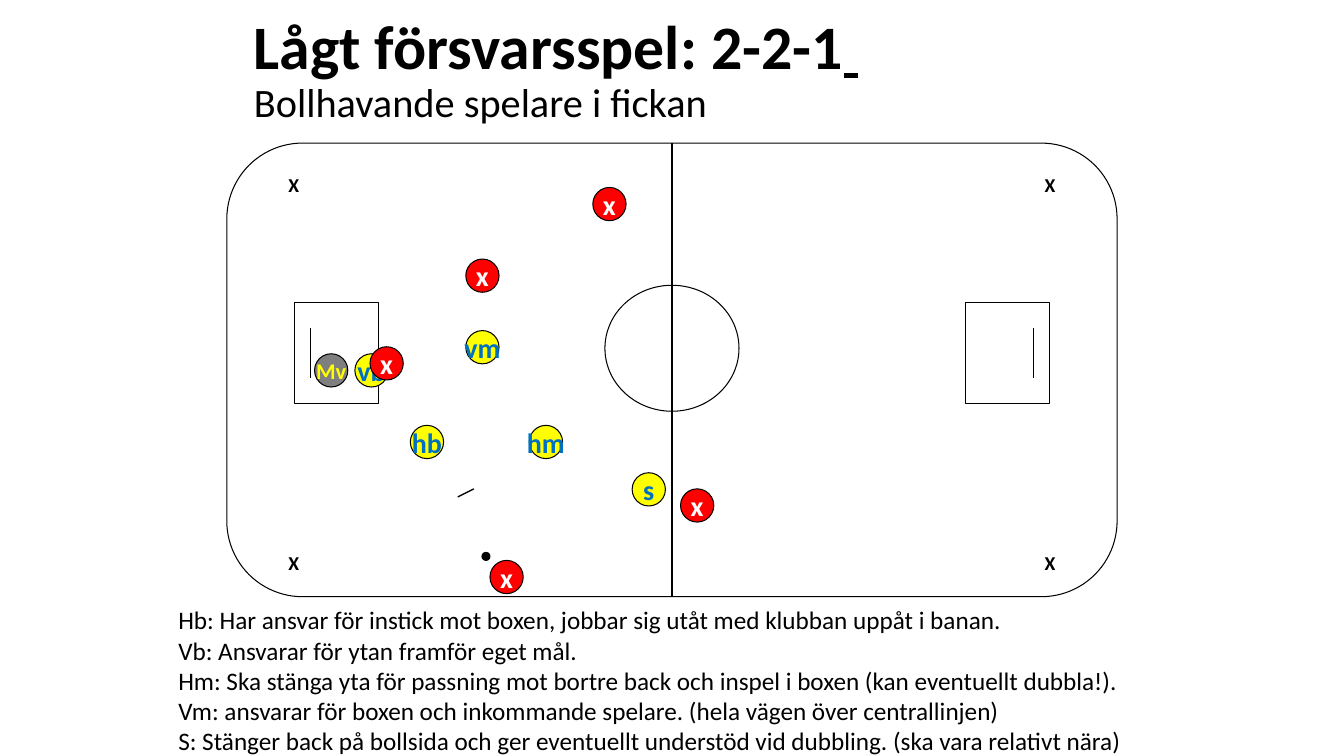
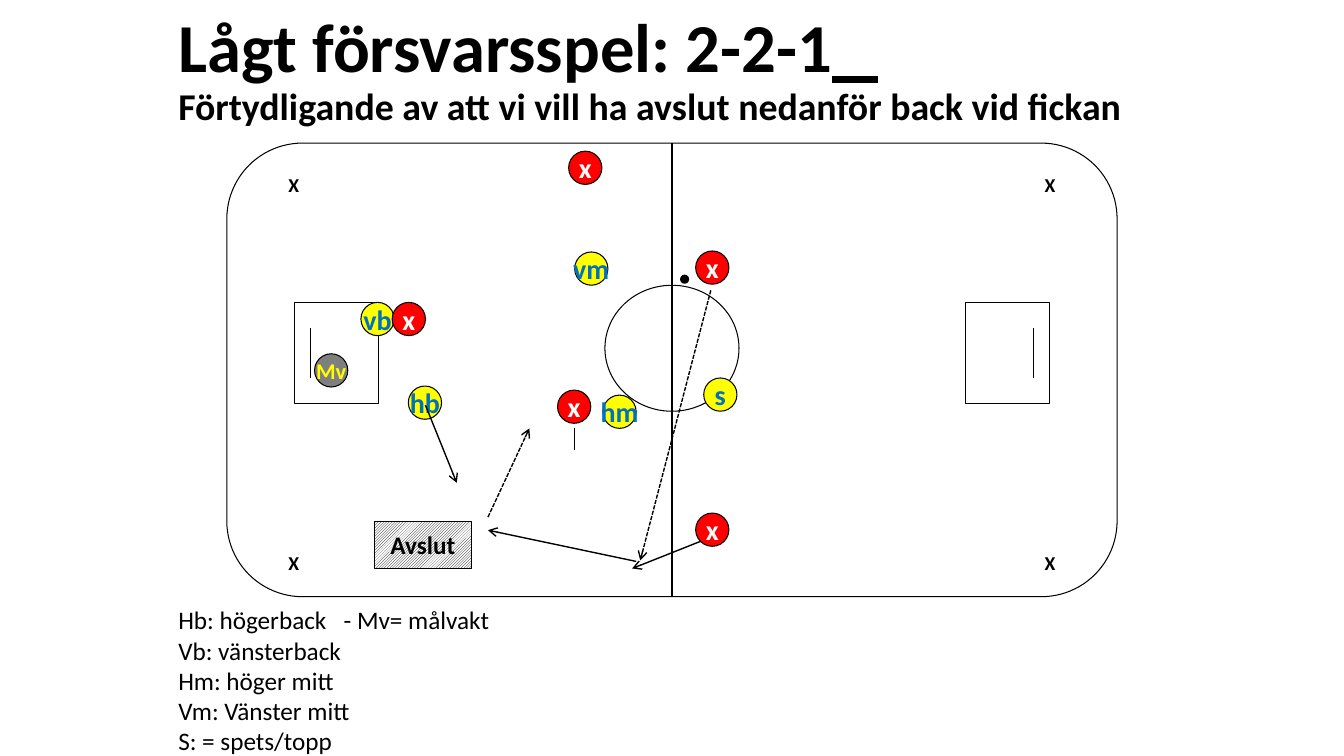
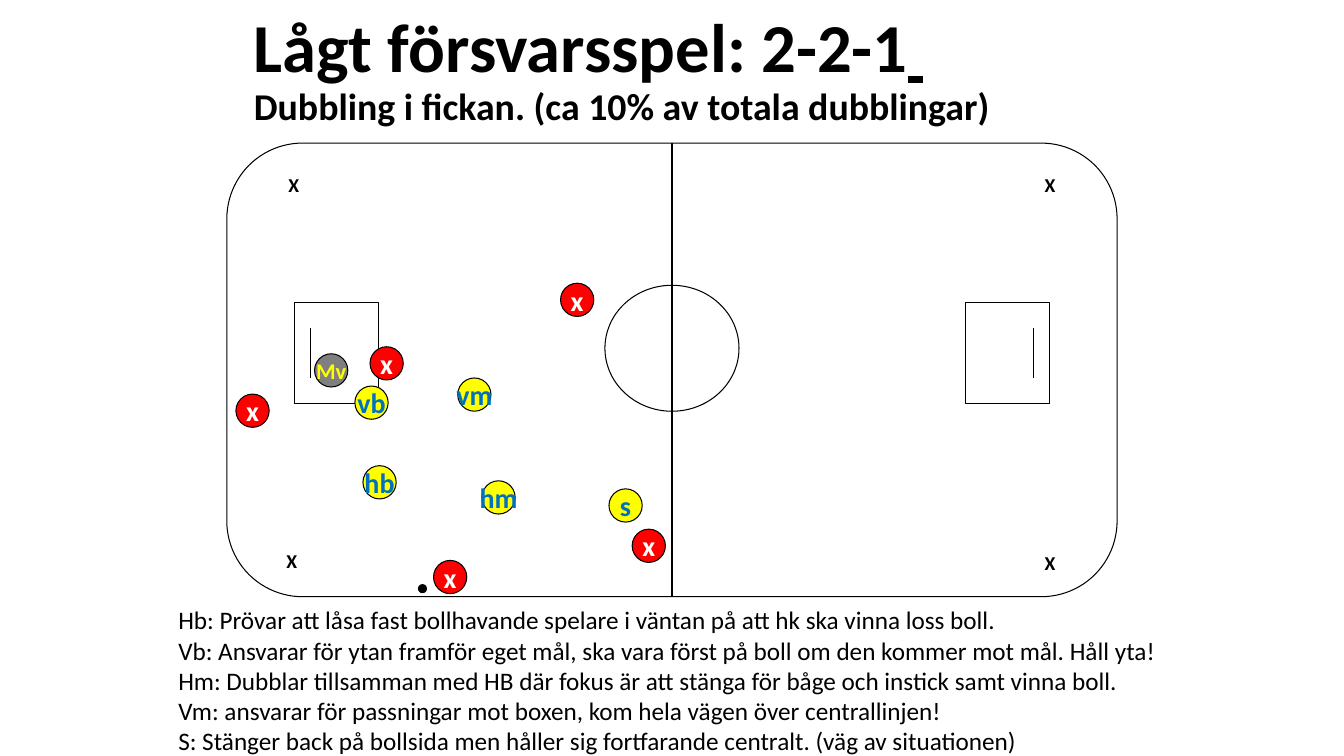
"""Build three slides of low-defence tactics on a shared rink."""
import dataclasses

import lxml.etree
import pptx
import pptx.dml.color
import pptx.enum.dml
import pptx.enum.shapes
import pptx.enum.text
import pptx.oxml.ns
import pptx.shapes.autoshape
import pptx.shapes.connector
import pptx.slide
import pptx.text.text
import pptx.util

Inches = pptx.util.Inches
Pt = pptx.util.Pt
Kind = pptx.enum.shapes.MSO_SHAPE
Anchor = pptx.enum.text.MSO_ANCHOR
Align = pptx.enum.text.PP_ALIGN
Fit = pptx.enum.text.MSO_AUTO_SIZE
qn = pptx.oxml.ns.qn

INK = {
    "black": "000000",
    "white": "FFFFFF",
    "red": "FF0000",
    "yellow": "FFFF00",
    "blue": "0070C0",
}
FONT = "Calibri"
HEAD = "Lågt försvarsspel: 2-2-1"
DISC = 0.33
DOT = 0.08
EDGE = 0.75
Spot = tuple[float, float]
Box = tuple[float, float, float, float]


@dataclasses.dataclass(frozen=True)
class Title:
    sub: str
    left: float = 2.42
    width: float = 8.5
    size: float = 49
    small: float = 27
    bold: bool = True
    gap: int = 1


@dataclasses.dataclass(frozen=True)
class Stroke:
    start: Spot
    end: Spot
    arrow: bool = True
    dash: bool = False


@dataclasses.dataclass(frozen=True)
class Play:
    title: Title
    team: dict[str, Spot]
    ball: Spot
    foes: list[Spot]
    notes: list[str]
    strokes: list[Stroke] = dataclasses.field(default_factory=list)
    corner: Spot = (2.76, 5.42)
    shot: Box | None = None


PLAYS = [
    Play(
        Title("Bollhavande spelare i fickan", size=44.1, small=28.8, bold=False),
        {"hm": (5.25, 4.22), "vm": (4.62, 3.28), "vb": (3.52, 3.51),
         "hb": (4.07, 4.22), "s": (6.27, 4.69)},
        (4.78, 5.48),
        [(4.86, 5.56), (5.88, 1.86), (6.75, 4.85), (4.62, 2.57), (3.67, 3.44)],
        ["Hb: Har ansvar för instick mot boxen, jobbar sig utåt med klubban uppåt i banan.",
         "Vb: Ansvarar för ytan framför eget mål.",
         "Hm: Ska stänga yta för passning mot bortre back och inspel i boxen (kan eventuellt dubbla!).",
         "Vm: ansvarar för boxen och inkommande spelare. (hela vägen över centrallinjen)",
         "S: Stänger back på bollsida och ger eventuellt understöd vid dubbling. (ska vara relativt nära)"],
        [Stroke((4.54, 4.93), (4.7, 4.85), arrow=False)],
    ),
    Play(
        Title("Förtydligande av att vi vill ha avslut nedanför back vid fickan",
              left=1.67, width=10, gap=3),
        {"hm": (5.98, 3.92), "vm": (5.7, 2.5), "vb": (3.58, 3),
         "hb": (4.05, 3.83), "s": (6.98, 3.75)},
        (6.75, 2.73),
        [(5.53, 3.87), (5.64, 1.5), (6.9, 5.09), (6.9, 2.49), (3.89, 3)],
        ["Hb: högerback\t- Mv= målvakt",
         "Vb: vänsterback",
         "Hm: höger mitt",
         "Vm: Vänster mitt",
         "S: = spets/topp"],
        [Stroke((7.05, 2.88), (6.35, 5.56), dash=True),
         Stroke((6.95, 5.37), (6.27, 5.64)),
         Stroke((6.31, 5.57), (4.84, 5.26)),
         Stroke((5.7, 4.25), (5.7, 4.46), arrow=False),
         Stroke((4.22, 4.02), (4.53, 4.79)),
         Stroke((4.84, 5.13), (5.25, 4.25), dash=True)],
        shot=(3.71, 5.17, 0.97, 0.47),
    ),
    Play(
        Title("Dubbling i fickan. (ca 10% av totala dubblingar)"),
        {"hm": (4.78, 4.77), "vm": (4.54, 3.75), "vb": (3.52, 3.83),
         "hb": (3.6, 4.62), "s": (6.04, 4.85)},
        (4.15, 5.8),
        [(4.3, 5.56), (5.56, 2.81), (6.27, 5.25), (2.34, 3.91), (3.67, 3.44)],
        ["Hb: Prövar att låsa fast bollhavande spelare i väntan på att hk ska vinna loss boll.",
         "Vb: Ansvarar för ytan framför eget mål, ska vara först på boll om den kommer mot mål. Håll yta!",
         "Hm: Dubblar tillsamman med HB där fokus är att stänga för båge och instick samt vinna boll.",
         "Vm: ansvarar för passningar mot boxen, kom hela vägen över centrallinjen!",
         "S: Stänger back på bollsida men håller sig fortfarande centralt. (väg av situationen)"],
        corner=(2.74, 5.4),
    ),
]


def tint(name: str) -> pptx.dml.color.RGBColor:
    return pptx.dml.color.RGBColor.from_string(INK[name])


def style(para: pptx.text.text._Paragraph, size: float, color: str = "black",
          bold: bool = True) -> None:
    for run in para.runs:
        font = run.font
        font.name, font.size, font.bold = FONT, Pt(size), bold
        font.color.rgb = tint(color)


def label(frame: pptx.text.text.TextFrame, text: str, size: float,
          color: str = "black", wrap: bool = False) -> None:
    frame.text = text
    frame.word_wrap = wrap
    para = frame.paragraphs[0]
    para.alignment = Align.CENTER
    style(para, size, color)


def shape(slide: pptx.slide.Slide, kind: Kind, box: Box, fill: str = "",
          width: float = EDGE) -> pptx.shapes.autoshape.Shape:
    item = slide.shapes.add_shape(kind, *map(Inches, box))
    item.shadow.inherit = False
    item.line.color.rgb = tint("black")
    item.line.width = Pt(width)
    if fill:
        item.fill.solid()
        item.fill.fore_color.rgb = tint(fill)
    else:
        item.fill.background()
    item.text_frame.vertical_anchor = Anchor.MIDDLE
    return item


def disc(slide: pptx.slide.Slide, spot: Spot, text: str, fill: str, color: str,
         size: float = 20) -> pptx.shapes.autoshape.Shape:
    item = shape(slide, Kind.OVAL, (*spot, DISC, DISC), fill)
    label(item.text_frame, text, size, color)
    return item


def line(slide: pptx.slide.Slide, stroke: Stroke,
         width: float = 1) -> pptx.shapes.connector.Connector:
    item = slide.shapes.add_connector(
        pptx.enum.shapes.MSO_CONNECTOR.STRAIGHT,
        *map(Inches, (*stroke.start, *stroke.end)))
    item.line.color.rgb = tint("black")
    item.line.width = Pt(width)
    if stroke.dash:
        item.line.dash_style = pptx.enum.dml.MSO_LINE.SQUARE_DOT
    props = item._element.spPr
    if stroke.arrow:
        lxml.etree.SubElement(props.find(qn("a:ln")), qn("a:tailEnd"), type="arrow")
    lxml.etree.SubElement(props, qn("a:effectLst"))
    return item


def head(slide: pptx.slide.Slide, title: Title) -> None:
    box = slide.shapes.add_textbox(
        *map(Inches, (title.left, 0.08, title.width, 1.25)))
    frame = box.text_frame
    frame.word_wrap = True
    frame.vertical_anchor = Anchor.MIDDLE
    frame.text = f"{HEAD}\n{title.sub}"
    top, sub = frame.paragraphs
    tail = top.add_run()
    tail.text = " " * title.gap
    tail.font.underline = True
    style(top, title.size)
    style(sub, title.small, bold=title.bold)
    top.line_spacing = sub.line_spacing = 0.9


def rink(slide: pptx.slide.Slide, corner: Spot) -> None:
    field = shape(slide, Kind.ROUNDED_RECTANGLE, (2.25, 1.42, 8.83, 4.5))
    field.adjustments[0] = 0.167
    middle = line(slide, Stroke((6.67, 1.42), (6.67, 5.92), arrow=False), EDGE)
    middle.begin_connect(field, 0)
    middle.end_connect(field, 2)
    for crease, goal in ((2.92, 3.08), (9.58, 10.25)):
        shape(slide, Kind.RECTANGLE, (crease, 3, 0.83, 1))
        line(slide, Stroke((goal, 3.25), (goal, 3.75), arrow=False), EDGE)
    for spot in ((2.76, 1.67), corner, (10.26, 1.67), (10.26, 5.42)):
        mark = slide.shapes.add_textbox(*map(Inches, (*spot, 0.31, 0.34)))
        label(mark.text_frame, "X", 14)
        mark.text_frame.auto_size = Fit.SHAPE_TO_FIT_TEXT
    shape(slide, Kind.OVAL, (6, 2.83, 1.33, 1.25))


def keeper(slide: pptx.slide.Slide) -> None:
    item = disc(slide, (3.12, 3.51), "Mv", "black", "yellow", 16)
    color = item._element.spPr.find(f"{qn('a:solidFill')}/{qn('a:srgbClr')}")
    lxml.etree.SubElement(color, qn("a:alpha"), val="50000")


def legend(slide: pptx.slide.Slide, notes: list[str]) -> None:
    box = slide.shapes.add_textbox(*map(Inches, (1.67, 5.95, 10, 1.6)))
    frame = box.text_frame
    frame.text = "\n".join(notes)
    frame.word_wrap = True
    frame.auto_size = Fit.SHAPE_TO_FIT_TEXT
    for para in frame.paragraphs:
        if "\t" in para.text:
            tabs = lxml.etree.SubElement(para._p.get_or_add_pPr(), qn("a:tabLst"))
            lxml.etree.SubElement(tabs, qn("a:tab"), pos=str(Inches(1.64)), algn="l")
        style(para, 18, bold=False)


def target(slide: pptx.slide.Slide, box: Box) -> None:
    item = shape(slide, Kind.RECTANGLE, box, width=0.5)
    item.fill.patterned()
    item.fill.pattern = pptx.enum.dml.MSO_PATTERN.LIGHT_UPWARD_DIAGONAL
    item.fill.fore_color.rgb = tint("black")
    item.fill.back_color.rgb = tint("white")
    label(item.text_frame, "Avslut", 18, wrap=True)


def draw(slide: pptx.slide.Slide, play: Play) -> None:
    head(slide, play.title)
    rink(slide, play.corner)
    keeper(slide)
    for name, spot in play.team.items():
        disc(slide, spot, name, "yellow", "blue")
    shape(slide, Kind.OVAL, (*play.ball, DOT, DOT), "black")
    for spot in play.foes:
        disc(slide, spot, "x", "red", "white")
    legend(slide, play.notes)
    for stroke in play.strokes:
        line(slide, stroke)
    if play.shot:
        target(slide, play.shot)


def main() -> None:
    deck = pptx.Presentation()
    deck.slide_width, deck.slide_height = Inches(13.33), Inches(7.5)
    for play in PLAYS:
        draw(deck.slides.add_slide(deck.slide_layouts[6]), play)
    deck.save("out.pptx")


if __name__ == "__main__":
    main()
